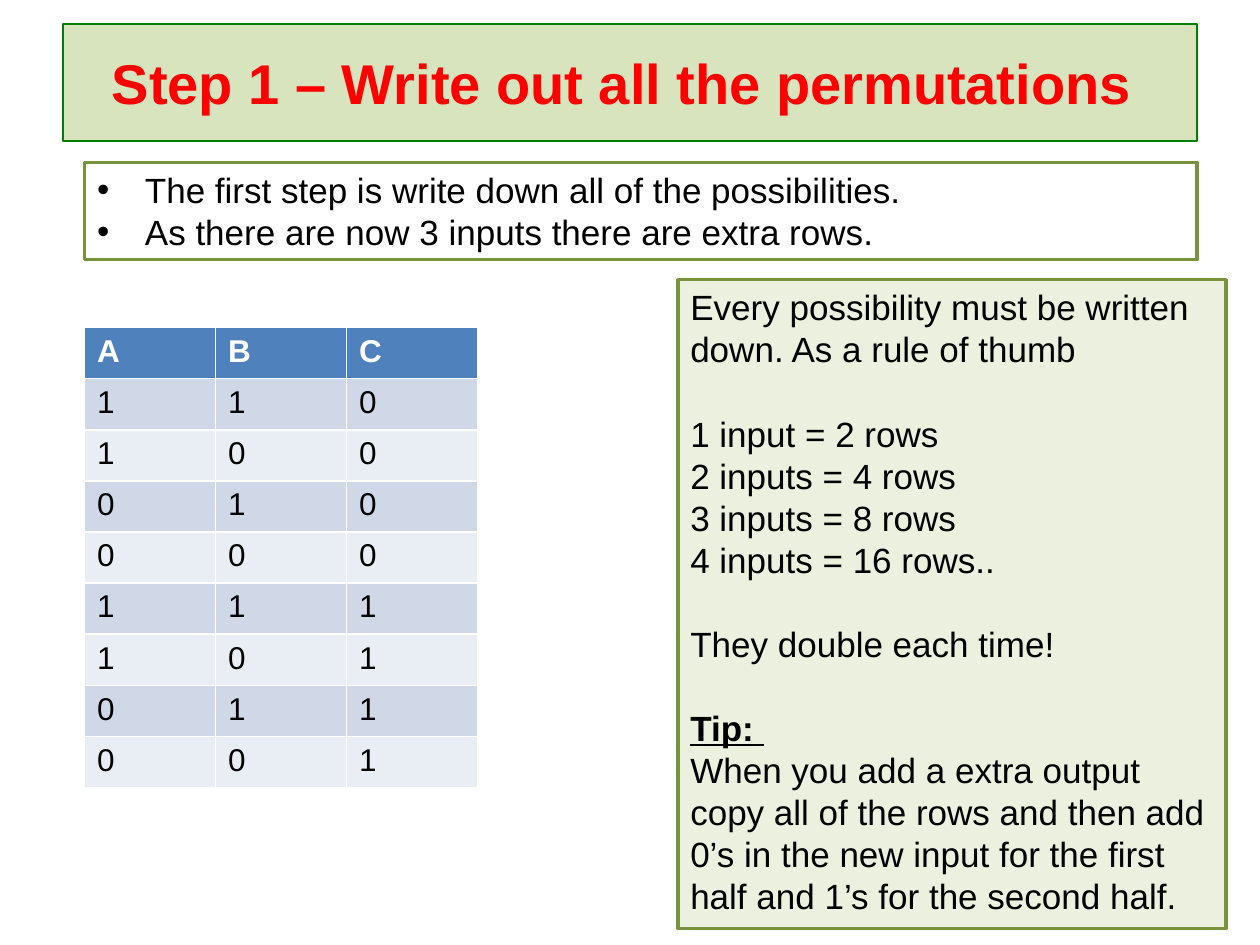
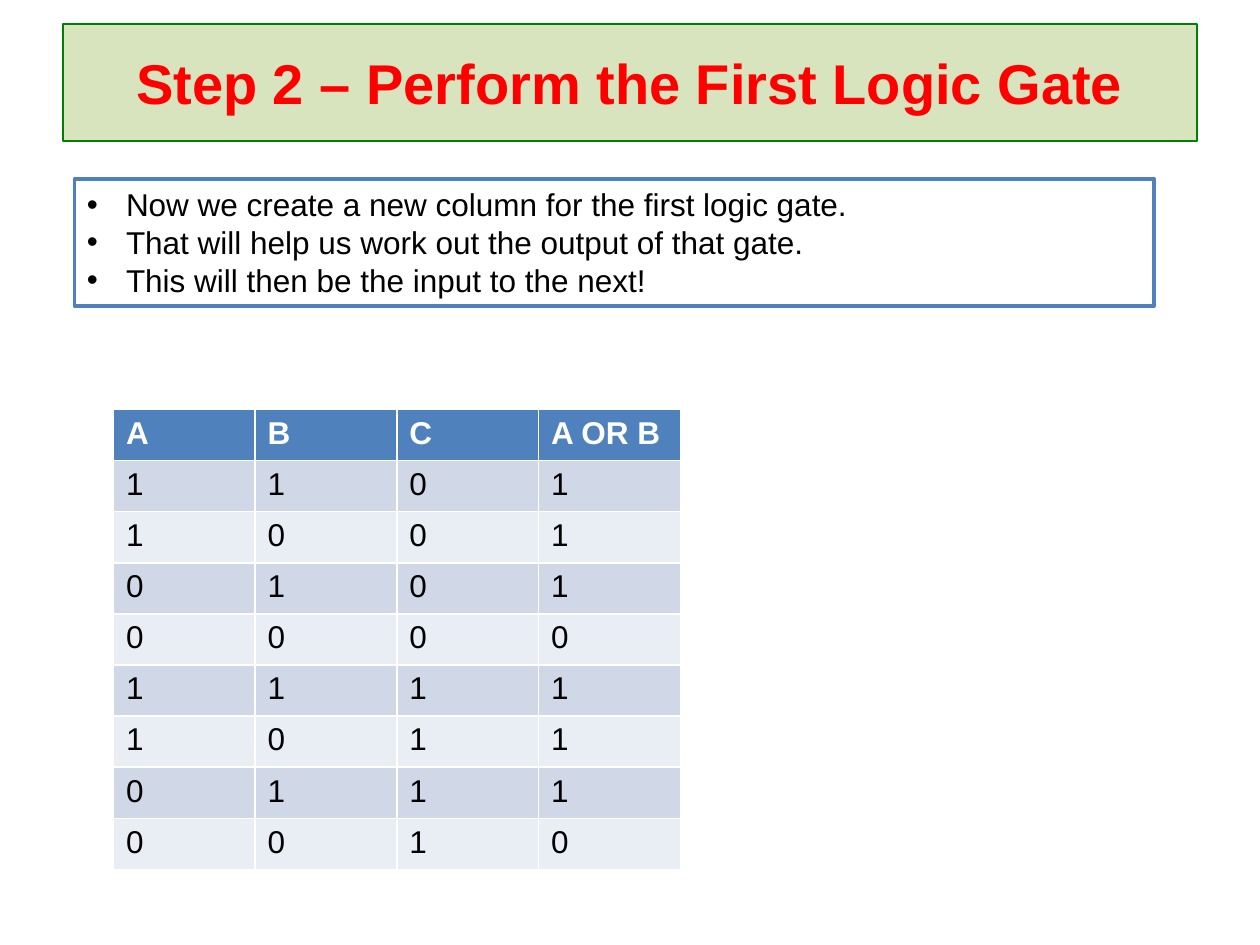
"""Build two slides on truth tables for three-input logic circuits."""
from dataclasses import dataclass
from itertools import product

from lxml.etree import SubElement
from pptx import Presentation
from pptx.dml.color import RGBColor
from pptx.enum.text import MSO_ANCHOR, MSO_AUTO_SIZE, PP_ALIGN
from pptx.oxml.ns import qn
from pptx.util import Inches, Pt

FONT = "Arial"
COLORS = {
    "title_fill": "D7E4BD", "title_line": "008000", "title_text": "FF0000",
    "olive": "77933C", "note_fill": "EBF1DE", "blue": "4F81BD",
    "band_dark": "D0D8E8", "band_light": "E9EDF4",
    "text": "000000", "header_text": "FFFFFF",
}
INPUT_ROWS = [(a, b, c) for c, a, b in product((0, 1), (1, 0), (1, 0))]


@dataclass(frozen=True)
class Box:
    left: float
    top: float
    width: float
    height: float

    def lengths(self) -> tuple:
        return tuple(Inches(v) for v in (self.left, self.top, self.width, self.height))


@dataclass(frozen=True)
class Points:
    box: Box
    lines: tuple
    size: int
    indent: float
    border: str


@dataclass(frozen=True)
class TruthTable:
    box: Box
    headings: tuple
    rows: list


@dataclass(frozen=True)
class NoteLine:
    text: str
    gap_before: int = 0
    heading: bool = False


@dataclass(frozen=True)
class Step:
    title: str
    points: Points
    table: TruthTable
    note: tuple = ()


TITLE_BOX = Box(0.5, 0.19, 9, 0.93)
NOTE_BOX = Box(5.38, 2.22, 4.35, 5.15)
NOTE_SIZE = 20
NOTE_GAP = 24

STEPS = (
    Step(
        "Step 1 – Write out all the permutations ",
        Points(Box(0.67, 1.29, 8.83, 0.77), (
            "The first step is write down all of the possibilities.",
            "As there are now 3 inputs there are extra rows.",
        ), 20, 0.38, "olive"),
        TruthTable(Box(0.67, 2.6, 3.12, 3.65), ("A", "B", "C"), INPUT_ROWS),
        (
            NoteLine("Every possibility must be written down. As a rule of thumb"),
            NoteLine("1 input = 2 rows", NOTE_GAP),
            NoteLine("2 inputs = 4 rows"),
            NoteLine("3 inputs = 8 rows"),
            NoteLine("4 inputs = 16 rows.."),
            NoteLine("They double each time!", NOTE_GAP),
            NoteLine("Tip: ", NOTE_GAP, heading=True),
            NoteLine("When you add a extra output copy all of the rows and then add "
                     "0’s in the new input for the first half and 1’s for the second half."),
        ),
    ),
    Step(
        "Step 2 – Perform the First Logic Gate",
        Points(Box(0.59, 1.42, 8.57, 1.01), (
            "Now we create a new column for the first logic gate.",
            "That will help us work out the output of that gate.",
            "This will then be the input to the next!",
        ), 18, 0.31, "blue"),
        TruthTable(Box(0.9, 3.25, 4.5, 3.65), ("A", "B", "C", "A OR B"),
                   [(a, b, c, a | b) for a, b, c in INPUT_ROWS]),
    ),
)


def color(name: str) -> RGBColor:
    return RGBColor.from_string(COLORS[name])


def fill_with(target, name: str) -> None:
    target.fill.solid()
    target.fill.fore_color.rgb = color(name)


def outline(shape, name: str, width: float) -> None:
    shape.line.color.rgb = color(name)
    shape.line.width = Pt(width)


def place(shape, box: Box) -> None:
    shape.left, shape.top, shape.width, shape.height = box.lengths()


def add_run(paragraph, text: str, size: int, name: str = "text", bold: bool = False):
    run = paragraph.add_run()
    run.text = text
    run.font.name = FONT
    run.font.size = Pt(size)
    run.font.bold = bold
    run.font.color.rgb = color(name)
    return run


def next_paragraph(frame, index: int):
    return frame.add_paragraph() if index else frame.paragraphs[0]


def setup_frame(frame, anchor: MSO_ANCHOR) -> None:
    frame.word_wrap = True
    frame.auto_size = MSO_AUTO_SIZE.NONE
    frame.vertical_anchor = anchor


def add_bullet(paragraph, indent: float) -> None:
    properties = paragraph._p.get_or_add_pPr()
    properties.set("marL", str(Inches(indent)))
    properties.set("indent", str(-Inches(indent)))
    SubElement(properties, qn("a:buFont"), typeface=FONT)
    SubElement(properties, qn("a:buChar"), char="•")


def draw_title(title, text: str) -> None:
    place(title, TITLE_BOX)
    fill_with(title, "title_fill")
    outline(title, "title_line", 0.75)
    setup_frame(title.text_frame, MSO_ANCHOR.MIDDLE)
    paragraph = title.text_frame.paragraphs[0]
    paragraph.alignment = PP_ALIGN.CENTER
    add_run(paragraph, text, 32, "title_text", bold=True)


def draw_points(body, points: Points) -> None:
    place(body, points.box)
    outline(body, points.border, 2)
    setup_frame(body.text_frame, MSO_ANCHOR.TOP)
    for index, line in enumerate(points.lines):
        paragraph = next_paragraph(body.text_frame, index)
        add_bullet(paragraph, points.indent)
        paragraph.space_before = Pt(0)
        add_run(paragraph, line, points.size)


def draw_table(slide, spec: TruthTable) -> None:
    rows = [spec.headings, *spec.rows]
    table = slide.shapes.add_table(len(rows), len(spec.headings), *spec.box.lengths()).table
    for row_index, values in enumerate(rows):
        is_header = row_index == 0
        band = "blue" if is_header else ("band_light", "band_dark")[row_index % 2]
        for column_index, value in enumerate(values):
            cell = table.cell(row_index, column_index)
            fill_with(cell, band)
            add_run(cell.text_frame.paragraphs[0], str(value), 18,
                    "header_text" if is_header else "text", bold=is_header)


def draw_note(slide, lines: tuple) -> None:
    note = slide.shapes.add_textbox(*NOTE_BOX.lengths())
    fill_with(note, "note_fill")
    outline(note, "olive", 2)
    setup_frame(note.text_frame, MSO_ANCHOR.TOP)
    for index, line in enumerate(lines):
        paragraph = next_paragraph(note.text_frame, index)
        paragraph.space_before = Pt(line.gap_before)
        run = add_run(paragraph, line.text, NOTE_SIZE, bold=line.heading)
        run.font.underline = line.heading


def main() -> None:
    deck = Presentation()
    deck.slide_width, deck.slide_height = Inches(10), Inches(7.5)
    for step in STEPS:
        slide = deck.slides.add_slide(deck.slide_layouts[1])
        draw_title(slide.shapes.title, step.title)
        draw_points(slide.placeholders[1], step.points)
        draw_table(slide, step.table)
        if step.note:
            draw_note(slide, step.note)
    deck.save("out.pptx")


if __name__ == "__main__":
    main()
